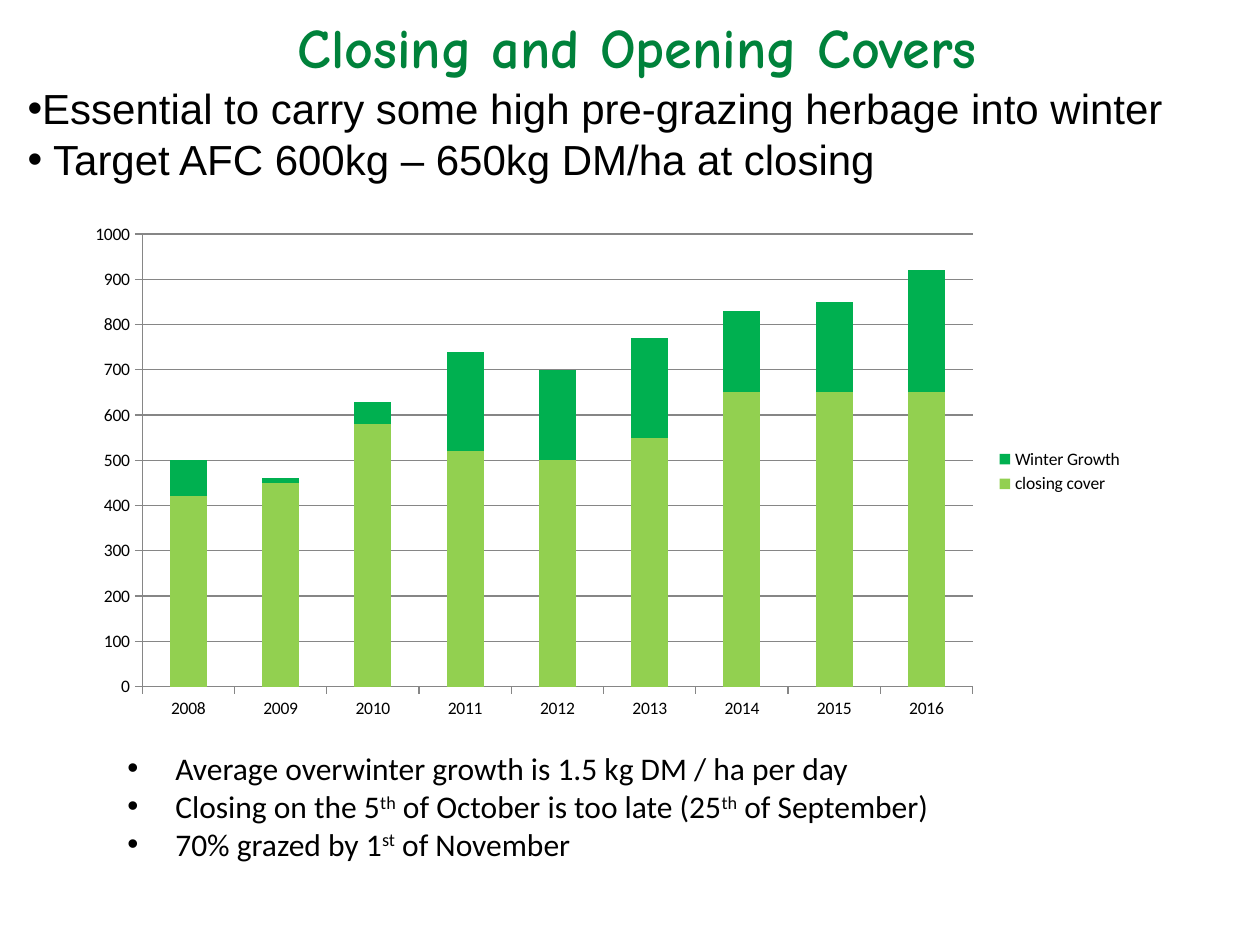
from pptx import Presentation
from pptx.chart.data import CategoryChartData
from pptx.dml.color import RGBColor
from pptx.enum.chart import XL_CHART_TYPE as ChartType, XL_LEGEND_POSITION as LegendPosition
from pptx.enum.chart import XL_TICK_MARK as TickMark
from pptx.enum.text import MSO_ANCHOR as Anchor, MSO_AUTO_SIZE as AutoSize, PP_ALIGN as Align
from pptx.oxml import parse_xml
from pptx.oxml.ns import nsdecls
from pptx.util import Emu, Pt

EMU_PER_PX = 914400 / 126


def color(hex_text):
    return RGBColor.from_string(hex_text)


def write(shape, box, lines, font="Calibri", size=18, fill="000000", bold=False,
          align=Align.LEFT, bullet=False, hanging=0, spacing=None):
    """Place the shape and fill it; text between ^ marks is superscript."""
    shape.left, shape.top, shape.width, shape.height = [Emu(round(v * EMU_PER_PX)) for v in box]
    frame = shape.text_frame
    frame.word_wrap = True
    frame.auto_size = AutoSize.NONE
    frame.vertical_anchor = Anchor.TOP
    for number, line in enumerate(lines):
        paragraph = frame.add_paragraph() if number else frame.paragraphs[0]
        paragraph.alignment = align
        paragraph.space_before = paragraph.space_after = Pt(0)
        if spacing:
            paragraph.line_spacing = Pt(spacing)
        if bullet:
            properties = paragraph._p.get_or_add_pPr()
            indent = round(hanging * EMU_PER_PX)
            properties.set("marL", str(indent))
            properties.set("indent", str(-indent))
            properties.append(parse_xml(f'<a:buFont {nsdecls("a")} typeface="Arial"/>'))
            properties.append(parse_xml(f'<a:buChar {nsdecls("a")} char="•"/>'))
        for part, text in enumerate(line.split("^")):
            run = paragraph.add_run()
            run.text = text
            run.font.name = font
            run.font.size = Pt(size)
            run.font.bold = bold
            run.font.color.rgb = color(fill)
            if part % 2:
                run._r.get_or_add_rPr().set("baseline", "30000")


presentation = Presentation()
presentation.slide_width = Emu(round(1260 * EMU_PER_PX))
presentation.slide_height = Emu(round(945 * EMU_PER_PX))
slide = presentation.slides.add_slide(presentation.slide_layouts[1])

# Title and opening points
write(slide.shapes.title, (15, 6, 1245, 81), ["Closing and Opening Covers"],
      font="Comic Neue", size=32, fill="00823B", bold=True, align=Align.CENTER)
write(slide.placeholders[1], (15, 76, 1216, 115),
      ["Essential to carry some high pre-grazing herbage into winter",
       " Target AFC 600kg – 650kg DM/ha at closing"],
      font="Arial", size=24, bullet=True, spacing=29)

# Stacked columns: closing cover plus winter growth
series_list = [
    ("closing cover", "92D050", (420, 450, 580, 520, 500, 550, 650, 650, 650)),
    ("Winter Growth", "00B050", (80, 10, 50, 220, 200, 220, 180, 200, 270)),
]
data = CategoryChartData()
data.categories = [str(year) for year in range(2008, 2017)]
for name, _, values in series_list:
    data.add_series(name, values)
chart_box = [Emu(round(v * EMU_PER_PX)) for v in (74, 214, 1062, 515)]
chart = slide.shapes.add_chart(ChartType.COLUMN_STACKED, *chart_box, data).chart
chart.has_title = False
chart.font.name = "Calibri"
chart.font.size = Pt(10)
chart.font.color.rgb = color("000000")

plot = chart.plots[0]
plot.gap_width = 150
plot.overlap = 100
plot.vary_by_categories = False
for series, (_, fill, _) in zip(plot.series, series_list):
    series.format.fill.solid()
    series.format.fill.fore_color.rgb = color(fill)

# Axes, gridlines and legend
value_axis = chart.value_axis
value_axis.minimum_scale = 0
value_axis.maximum_scale = 1000
value_axis.major_unit = 100
value_axis.has_major_gridlines = True
for axis in (chart.category_axis, value_axis):
    axis.major_tick_mark = TickMark.OUTSIDE
for line_owner in (chart.category_axis, value_axis, value_axis.major_gridlines):
    line_owner.format.line.color.rgb = color("868686")
    line_owner.format.line.width = Pt(0.75)
chart.has_legend = True
chart.legend.position = LegendPosition.RIGHT
chart.legend.include_in_layout = False

# Closing points
write(slide.shapes.add_textbox(0, 0, 0, 0), (115, 743, 906, 127),
      ["Average overwinter growth is 1.5 kg DM / ha per day",
       "Closing on the 5^th^ of October is too late (25^th^ of September)",
       "70% grazed by 1^st^ of November"],
      bullet=True, hanging=48)

presentation.save("out.pptx")
